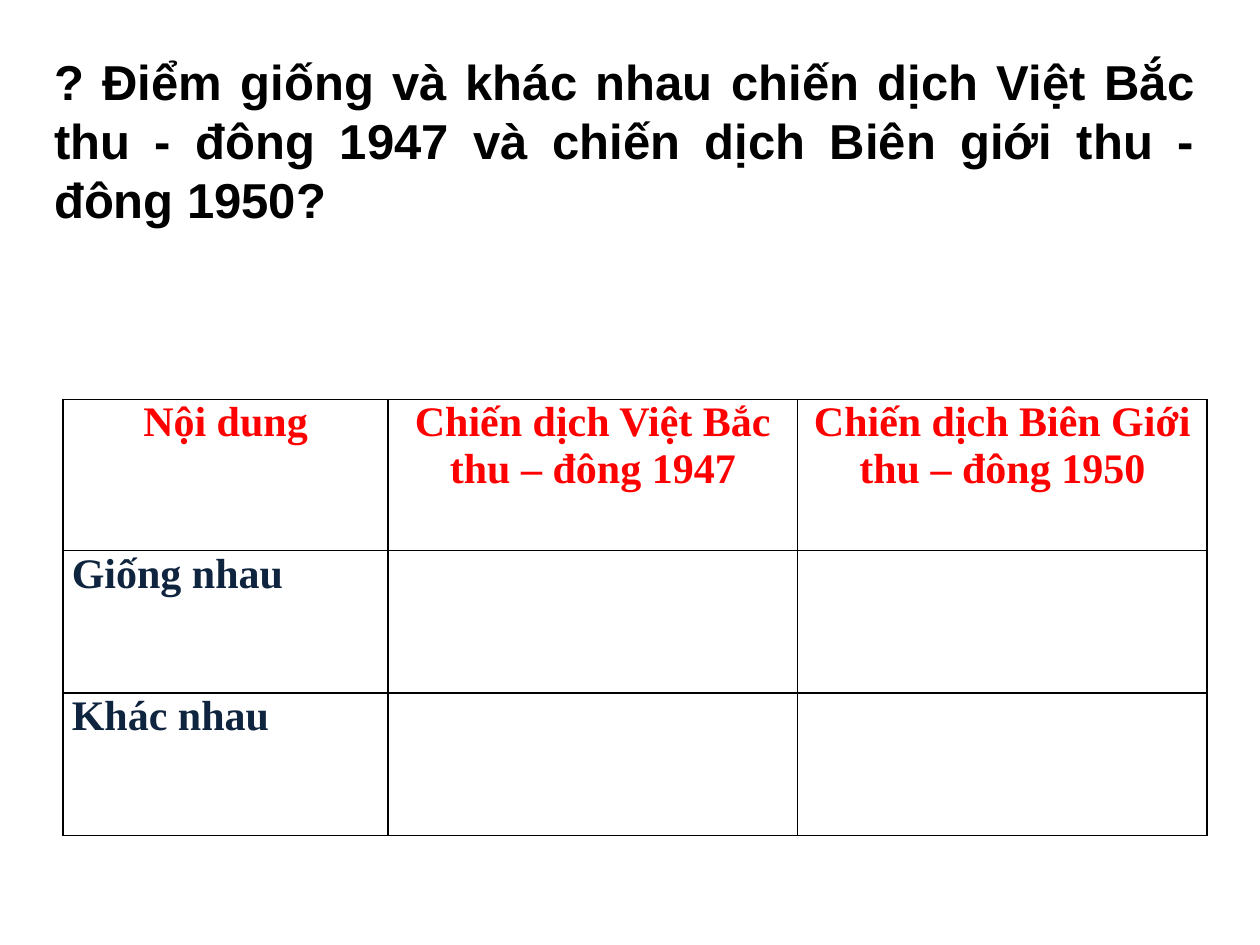
from pptx import Presentation
from pptx.dml.color import RGBColor
from pptx.enum import text
from pptx.oxml import parse_xml
from pptx.oxml.ns import nsdecls
from pptx.util import Inches, Pt

THEME = {
    "question": ("Arial", 28, "000000"),
    "heading": ("Times New Roman", 24, "FF0000"),
    "label": ("Times New Roman", 24, "0F243E"),
    "border": "000000",
}
COLUMNS = [2.58, 3.25, 3.25]
ROWS = [1.2, 1.13, 1.13]
COMPARISON = [
    ["Nội dung", "Chiến dịch Việt Bắc thu – đông 1947",
     "Chiến dịch Biên Giới thu – đông 1950"],
    ["Giống nhau", "", ""],
    ["Khác nhau", "", ""],
]


def write(frame, words, style, align):
    paragraph = frame.paragraphs[0]
    paragraph.alignment = align
    run = paragraph.add_run()
    run.text = words
    font_name, size, color = THEME[style]
    run.font.name, run.font.size, run.font.bold = font_name, Pt(size), True
    run.font.color.rgb = RGBColor.from_string(color)


def outline(cell):
    properties = cell._tc.get_or_add_tcPr()
    for position, side in enumerate(("lnL", "lnR", "lnT", "lnB")):
        properties.insert(position, parse_xml(
            f'<a:{side} {nsdecls("a")} w="{Pt(1)}"><a:solidFill>'
            f'<a:srgbClr val="{THEME["border"]}"/></a:solidFill></a:{side}>'))


deck = Presentation()
deck.slide_width, deck.slide_height = Inches(10), Inches(7.5)
slide = deck.slides.add_slide(deck.slide_layouts[5])

# Question
question = slide.shapes.title
question.left, question.top = Inches(0.33), Inches(0.33)
question.width, question.height = Inches(9.25), Inches(2.73)
frame = question.text_frame
frame.word_wrap = True
frame.auto_size = text.MSO_AUTO_SIZE.NONE
frame.vertical_anchor = text.MSO_ANCHOR.TOP
frame.margin_top = Inches(0.08)
write(frame, "? Điểm giống và khác nhau chiến dịch Việt Bắc thu - đông 1947 "
      "và chiến dịch Biên giới thu - đông 1950?", "question", text.PP_ALIGN.JUSTIFY)

# Comparison table
comparison = slide.shapes.add_table(
    len(ROWS), len(COLUMNS), Inches(0.5), Inches(3.17),
    Inches(sum(COLUMNS)), Inches(sum(ROWS))).table
comparison.first_row = comparison.horz_banding = False
for column, width in zip(comparison.columns, COLUMNS):
    column.width = Inches(width)
for row, height in zip(comparison.rows, ROWS):
    row.height = Inches(height)

for r, entries in enumerate(COMPARISON):
    for c, words in enumerate(entries):
        cell = comparison.cell(r, c)
        cell.margin_left = cell.margin_right = Inches(0.07)
        cell.margin_top = cell.margin_bottom = 0
        cell.fill.background()
        outline(cell)
        if words:
            style, align = (("heading", text.PP_ALIGN.CENTER) if r == 0
                            else ("label", text.PP_ALIGN.JUSTIFY))
            write(cell.text_frame, words, style, align)

deck.save("out.pptx")
